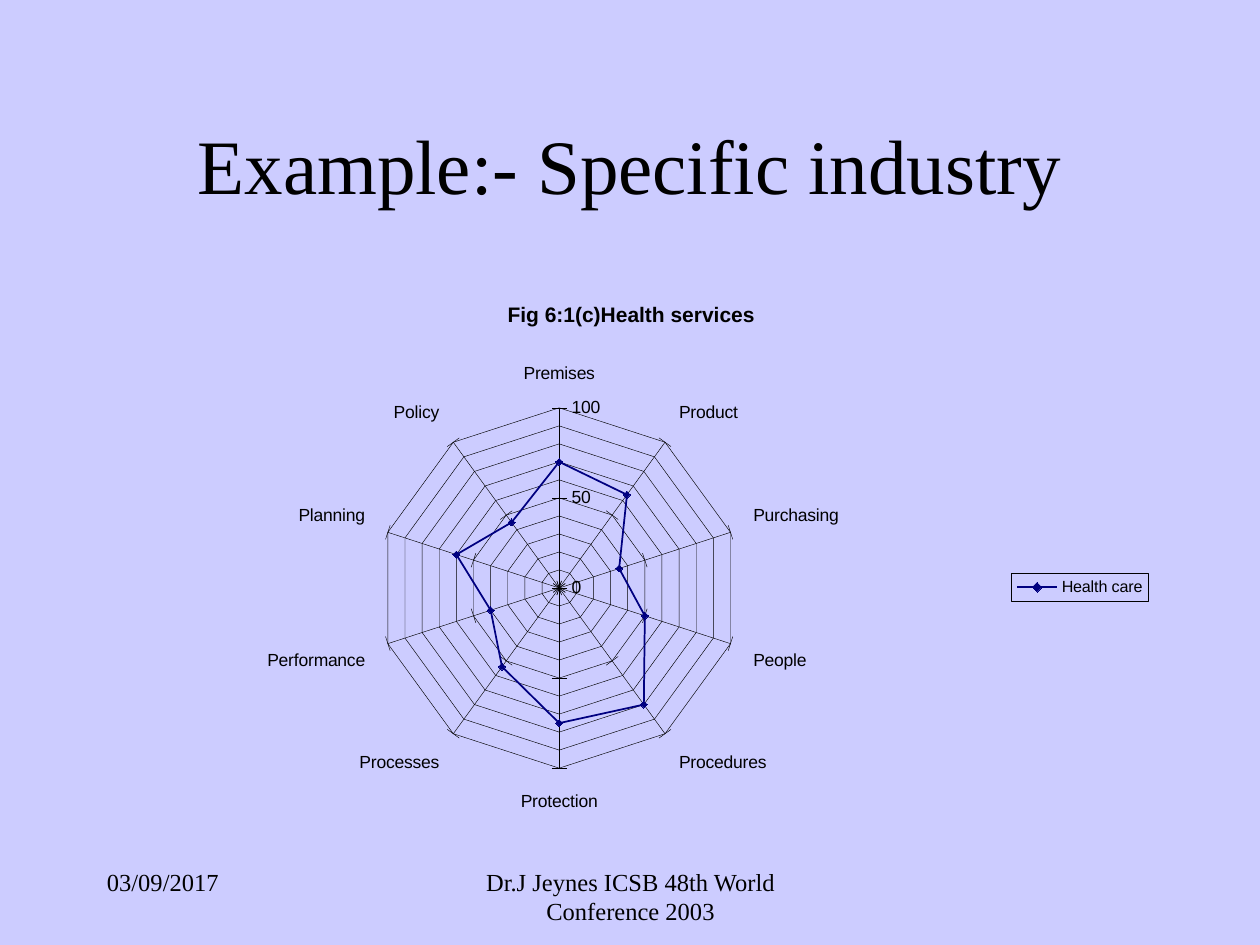
from copy import deepcopy
from dataclasses import dataclass

from lxml import etree
from pptx import Presentation
from pptx import util as u
from pptx.chart.data import CategoryChartData
from pptx.dml.color import RGBColor
from pptx.enum import chart as ch
from pptx.enum import text
from pptx.oxml.ns import qn


@dataclass(frozen=True)
class Theme:
    background = RGBColor.from_string("CCCCFF")
    ink = RGBColor.from_string("000000")
    series = RGBColor.from_string("000080")
    serif = "Times New Roman"
    sans = "Arial"
    heading_size = u.Pt(44)
    footer_size = u.Pt(14)
    caption_size = u.Pt(12)
    label_size = u.Pt(10)
    legend_size = u.Pt(9.2)
    hairline = u.Pt(0.25)


theme = Theme()


def add_text(left, top, width, height, wording, size, align, anchor):
    frame = slide.shapes.add_textbox(*map(u.Inches, (left, top, width, height))).text_frame
    frame.word_wrap = True
    frame.vertical_anchor = anchor
    paragraph = frame.paragraphs[0]
    paragraph.alignment = align
    run = paragraph.add_run()
    run.text = wording
    run.font.name, run.font.size = theme.serif, size
    run.font.color.rgb = theme.ink


def set_layout(part, index, **fractions):
    """Place a chart part by fractions of the chart area."""
    for old in part.findall(qn("c:layout")):
        part.remove(old)
    layout = etree.Element(qn("c:layout"))
    manual = etree.SubElement(layout, qn("c:manualLayout"))
    if "target" in fractions:
        etree.SubElement(manual, qn("c:layoutTarget")).set("val", fractions.pop("target"))
    for side in ("x", "y"):
        etree.SubElement(manual, qn(f"c:{side}Mode")).set("val", "edge")
    for side, value in fractions.items():
        etree.SubElement(manual, qn(f"c:{side}")).set("val", str(value))
    part.insert(index, layout)


prs = Presentation()
prs.slide_width, prs.slide_height = u.Inches(10), u.Inches(7.5)
slide = prs.slides.add_slide(prs.slide_layouts[6])
slide.background.fill.solid()
slide.background.fill.fore_color.rgb = theme.background

# Heading and footer
align, anchor = text.PP_ALIGN, text.MSO_ANCHOR
add_text(0.75, 6.83, 2.08, 0.5, "03/09/2017", theme.footer_size, align.LEFT, anchor.TOP)
add_text(3.42, 6.83, 3.17, 0.5, "Dr.J Jeynes ICSB 48th World Conference 2003",
         theme.footer_size, align.CENTER, anchor.TOP)
add_text(0.75, 0.67, 8.5, 1.25, "Example:- Specific industry",
         theme.heading_size, align.CENTER, anchor.MIDDLE)

# Radar chart
scores = {
    "Premises": 70, "Product": 64, "Purchasing": 35, "People": 50, "Procedures": 80,
    "Protection": 75, "Processes": 54, "Performance": 40, "Planning": 60, "Policy": 45,
}
data = CategoryChartData()
data.categories = list(scores)
data.add_series("Health care", list(scores.values()))
radar = slide.shapes.add_chart(
    ch.XL_CHART_TYPE.RADAR_MARKERS,
    *map(u.Inches, (0.81, 2.23, 8.39, 4.38)), data).chart
radar.font.name, radar.font.size = theme.sans, theme.label_size
radar.font.color.rgb = theme.ink
radar.plots[0].vary_by_categories = False
set_layout(radar.plots[0]._element.getparent(), 0,
           target="inner", x=0.262, y=0.23, w=0.341, h=0.653)

# Chart caption
radar.has_title = True
caption = radar.chart_title.text_frame.paragraphs[0].add_run()
caption.text = "Fig 6:1(c)Health services"
caption.font.name, caption.font.size = theme.sans, theme.caption_size
caption.font.bold = True
caption.font.color.rgb = theme.ink
set_layout(radar.chart_title._element, 1, x=0.38, y=0.03)

# Axes
spokes, scale = radar.category_axis, radar.value_axis
spokes.has_major_gridlines = True
spokes.major_tick_mark = ch.XL_TICK_MARK.OUTSIDE
scale.minimum_scale, scale.maximum_scale = 0, 100
scale.major_unit, scale.minor_unit = 50, 10
scale.has_major_gridlines = scale.has_minor_gridlines = True
scale.major_tick_mark = ch.XL_TICK_MARK.CROSS
scale.minor_tick_mark = ch.XL_TICK_MARK.NONE
for part in (spokes, scale, spokes.major_gridlines, scale.major_gridlines):
    part.format.line.color.rgb = theme.ink
    part.format.line.width = theme.hairline
major_style = scale._element.find(qn("c:majorGridlines")).find(qn("c:spPr"))
scale._element.find(qn("c:minorGridlines")).append(deepcopy(major_style))
for axis in (spokes, scale):
    labels = axis.tick_labels.font
    labels.name, labels.size = theme.sans, theme.label_size
    labels.color.rgb = theme.ink

# Health care series
health_care = radar.plots[0].series[0]
health_care.format.line.color.rgb = theme.series
health_care.format.line.width = u.Pt(1)
marker = health_care.marker
marker.style, marker.size = ch.XL_MARKER_STYLE.DIAMOND, 4
marker.format.fill.solid()
marker.format.fill.fore_color.rgb = theme.series
marker.format.line.color.rgb = theme.series

# Legend with a thin frame
radar.has_legend = True
legend = radar.legend
legend.position = ch.XL_LEGEND_POSITION.RIGHT
legend.include_in_layout = False
legend.font.name, legend.font.size = theme.sans, theme.legend_size
legend.font.color.rgb = theme.ink
set_layout(legend._element, 1, x=0.86, y=0.53, w=0.13, h=0.05)
frame = etree.Element(qn("c:spPr"))
line = etree.SubElement(frame, qn("a:ln"), w=str(int(theme.hairline)))
fill = etree.SubElement(line, qn("a:solidFill"))
etree.SubElement(fill, qn("a:srgbClr"), val=str(theme.ink))
legend._element.find(qn("c:txPr")).addprevious(frame)

prs.save("out.pptx")
